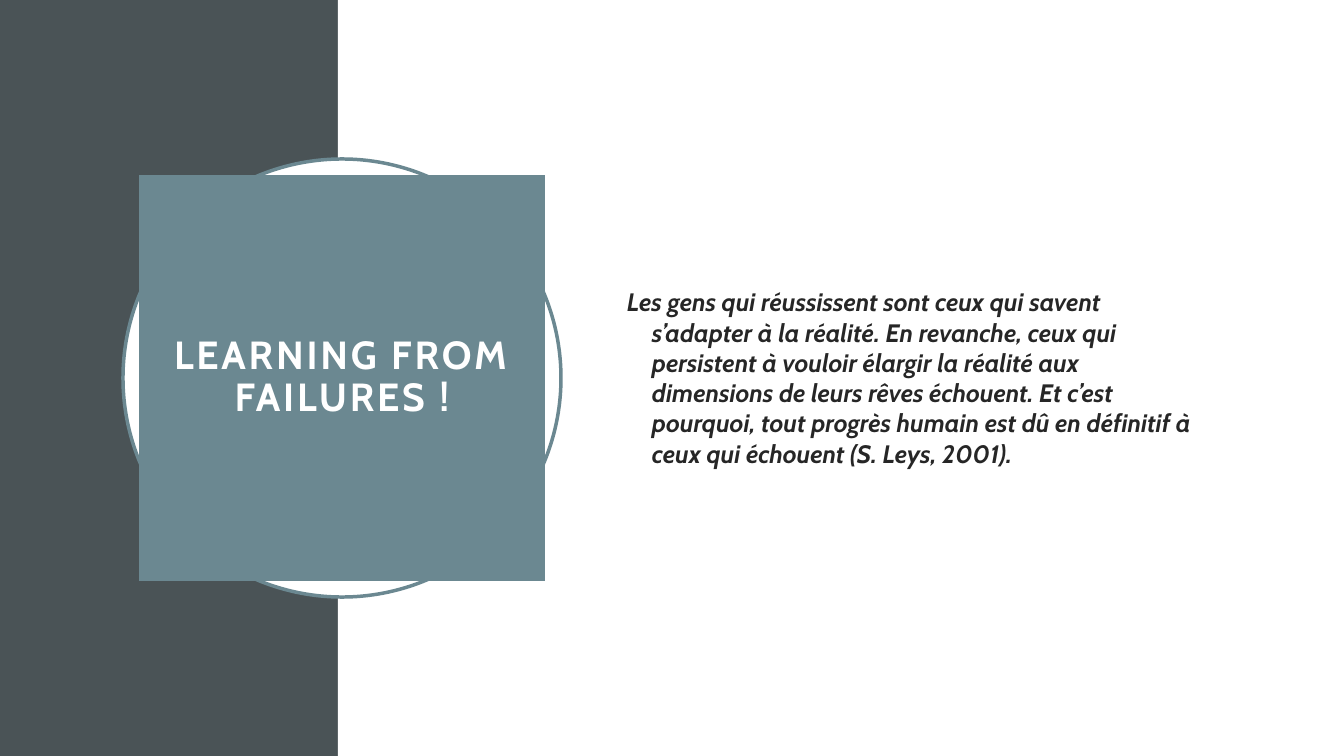
from pptx import Presentation
from pptx.dml.color import RGBColor as RGB
from pptx.enum.shapes import MSO_SHAPE as SHAPE
from pptx.enum.text import MSO_ANCHOR as ANCHOR, MSO_AUTO_SIZE as FIT, PP_ALIGN as ALIGN
from pptx.util import Pt

PX = 914400 / 100.8
THEME = {
    "slate": RGB.from_string("4A5356"),
    "teal": RGB.from_string("6B8891"),
    "white": RGB.from_string("FFFFFF"),
    "ink": RGB.from_string("262626"),
    "font": "Cabin",
    "title": Pt(28),
    "quote": Pt(18),
    "ring": Pt(2.5),
}


def px(length):
    return round(length * PX)


def apply(target, values):
    for key, value in values.items():
        setattr(target, key, value)


deck = Presentation()
apply(deck, {"slide_width": px(1344), "slide_height": px(756)})
slide = deck.slides.add_slide(deck.slide_layouts[5])

panels = [
    (SHAPE.RECTANGLE, (0, 0, 338, 756), "slate", None),
    (SHAPE.RECTANGLE, (338, 0, 1006, 756), "white", None),
    (SHAPE.OVAL, (123, 159, 438, 438), "white", "teal"),
]
for kind, box, fill, outline in panels:
    panel = slide.shapes.add_shape(kind, *map(px, box))
    panel.shadow.inherit = False
    panel.fill.solid()
    panel.fill.fore_color.rgb = THEME[fill]
    if outline:
        panel.line.color.rgb = THEME[outline]
        panel.line.width = THEME["ring"]
    else:
        panel.line.fill.background()

heading = slide.shapes.title
panel.element.addnext(heading.element)
apply(heading, {"left": px(139), "top": px(175), "width": px(406), "height": px(406)})
heading.fill.solid()
heading.fill.fore_color.rgb = THEME["teal"]
quote = slide.shapes.add_textbox(px(617), px(154), px(587), px(447))

texts = [
    (heading, "LEARNING FROM FAILURES !", 20, 20,
     {"alignment": ALIGN.CENTER, "line_spacing": 0.9},
     {"size": THEME["title"], "italic": False}, "white"),
    (quote,
     "Les gens qui réussissent sont ceux qui savent s’adapter à la réalité. "
     "En revanche, ceux qui persistent à vouloir élargir la réalité aux "
     "dimensions de leurs rêves échouent. Et c’est pourquoi, tout progrès "
     "humain est dû en définitif à ceux qui échouent (S. Leys, 2001).", 10, 5,
     {"alignment": ALIGN.LEFT, "space_before": Pt(10)},
     {"size": THEME["quote"], "italic": True}, "ink"),
]
for holder, wording, side, edge, layout, style, color in texts:
    frame = holder.text_frame
    apply(frame, {
        "word_wrap": True, "auto_size": FIT.NONE, "vertical_anchor": ANCHOR.MIDDLE,
        "margin_left": px(side), "margin_right": px(side),
        "margin_top": px(edge), "margin_bottom": px(edge),
    })
    paragraph = frame.paragraphs[0]
    apply(paragraph, layout)
    run = paragraph.add_run()
    run.text = wording
    apply(run.font, {"name": THEME["font"], "bold": True, **style})
    run.font.color.rgb = THEME[color]

heading.text_frame.paragraphs[0].runs[0].font._element.set("spc", "200")
hanging = quote.text_frame.paragraphs[0]._p.get_or_add_pPr()
hanging.set("marL", str(px(25)))
hanging.set("indent", str(px(-25)))

deck.save("out.pptx")
